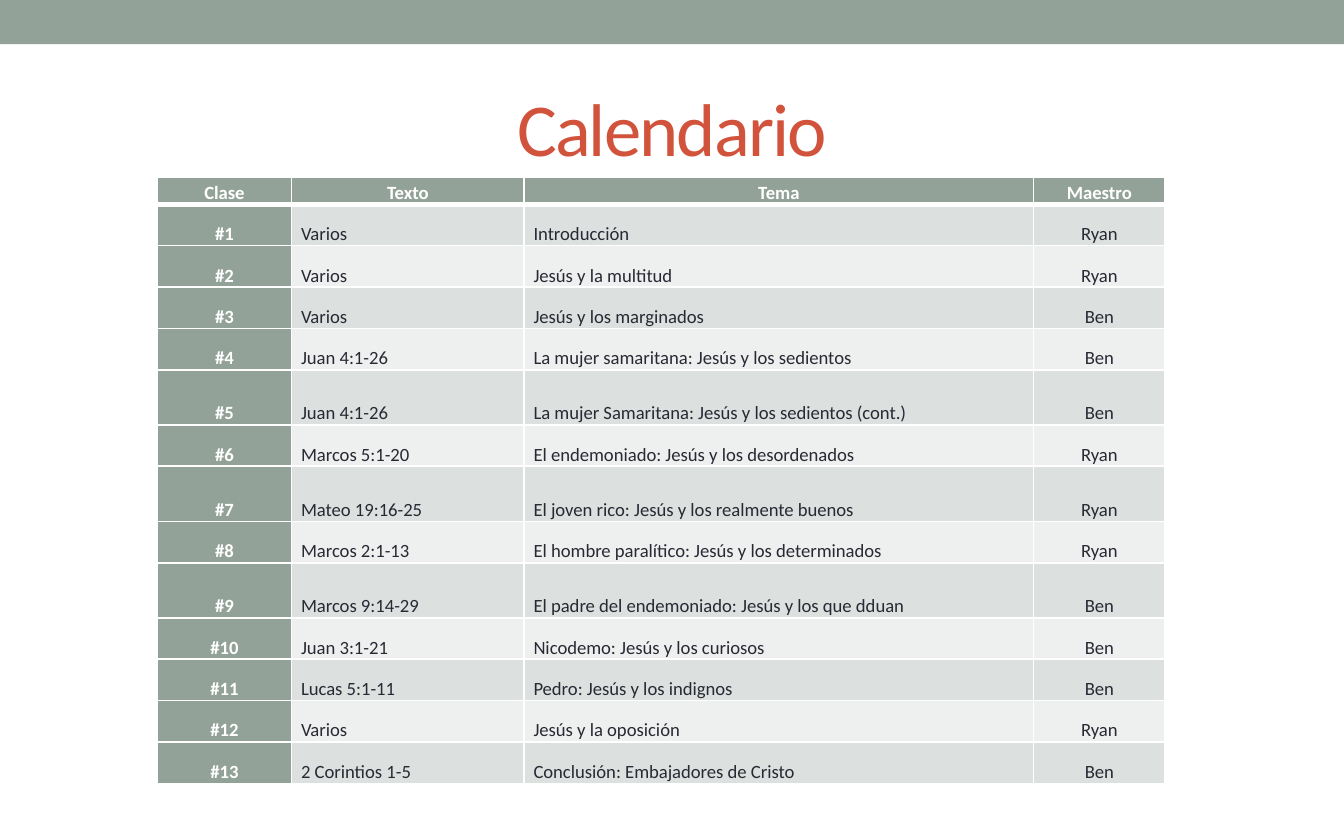
from dataclasses import dataclass

from lxml import etree
from pptx import Presentation
from pptx.dml.color import RGBColor
from pptx.enum.shapes import MSO_SHAPE
from pptx.enum.text import MSO_ANCHOR, PP_ALIGN
from pptx.oxml.ns import qn
from pptx.util import Inches, Pt

RECTANGLE = MSO_SHAPE.RECTANGLE
LEFT, CENTER = PP_ALIGN.LEFT, PP_ALIGN.CENTER
MIDDLE, BOTTOM = MSO_ANCHOR.MIDDLE, MSO_ANCHOR.BOTTOM


@dataclass(frozen=True)
class Theme:
    font: str = "Calibri"
    title_size: int = 40
    table_size: int = 10
    sage: str = "93A299"
    dark_row: str = "DCE0DE"
    light_row: str = "EEF0EF"
    rust: str = "D2533C"
    ink: str = "292934"
    white: str = "FFFFFF"


THEME = Theme()

HEADINGS = ("Clase", "Texto", "Tema", "Maestro")
LESSONS = [
    ("Varios", "Introducción", "Ryan"),
    ("Varios", "Jesús y la multitud", "Ryan"),
    ("Varios", "Jesús y los marginados", "Ben"),
    ("Juan 4:1-26", "La mujer samaritana: Jesús y los sedientos", "Ben"),
    ("Juan 4:1-26", "La mujer Samaritana: Jesús y los sedientos (cont.)", "Ben"),
    ("Marcos 5:1-20", "El endemoniado: Jesús y los desordenados", "Ryan"),
    ("Mateo 19:16-25", "El joven rico: Jesús y los realmente buenos", "Ryan"),
    ("Marcos 2:1-13", "El hombre paralítico: Jesús y los determinados", "Ryan"),
    ("Marcos 9:14-29", "El padre del endemoniado: Jesús y los que dduan", "Ben"),
    ("Juan 3:1-21", "Nicodemo: Jesús y los curiosos", "Ben"),
    ("Lucas 5:1-11", "Pedro: Jesús y los indignos", "Ben"),
    ("Varios", "Jesús y la oposición", "Ryan"),
    ("2 Corintios 1-5", "Conclusión: Embajadores de Cristo", "Ben"),
]

# Table measures in inches; the ordinary rows share the height left over
COLUMN_WIDTHS = (1.0, 1.73, 3.79, 0.98)
TABLE_HEIGHT, HEADER_HEIGHT, TALL_HEIGHT = 4.51, 0.2, 0.41
TALL_LESSONS = (5, 7, 9)
LESSON_HEIGHT = (
    TABLE_HEIGHT - HEADER_HEIGHT - TALL_HEIGHT * len(TALL_LESSONS)
) / (len(LESSONS) - len(TALL_LESSONS))


def apply_format(target, values):
    for name, value in values.items():
        setattr(target, name, value)


def format_font(font, size, color, bold=False):
    apply_format(font, {"name": THEME.font, "size": Pt(size), "bold": bold})
    font.color.rgb = RGBColor.from_string(color)


def add_top_band(slide, width):
    band = slide.shapes.add_shape(RECTANGLE, 0, 0, width, Inches(0.33))
    band.shadow.inherit = False
    band.fill.solid()
    band.fill.fore_color.rgb = RGBColor.from_string(THEME.sage)
    band.line.fill.background()


def set_title(slide, text):
    title = slide.shapes.title
    apply_format(title, {
        "left": Inches(0.5), "top": Inches(0.49),
        "width": Inches(9), "height": Inches(0.9),
    })
    title.text_frame.vertical_anchor = MIDDLE
    paragraph = title.text_frame.paragraphs[0]
    paragraph.alignment = CENTER
    run = paragraph.add_run()
    run.text = text
    format_font(run.font, THEME.title_size, THEME.rust)
    run.font._element.set("spc", "-100")


def set_borders(cell, widths):
    """Draw white cell edges; widths maps L, R, T and B to points."""
    properties = cell._tc.get_or_add_tcPr()
    for side, points in widths.items():
        edge = etree.SubElement(properties, qn(f"a:ln{side}"), w=str(Pt(points)))
        fill = etree.SubElement(edge, qn("a:solidFill"))
        etree.SubElement(fill, qn("a:srgbClr"), val=THEME.white)


def fill_cell(cell, text, row, column):
    is_heading = row == 0 or column == 0
    band_color = THEME.dark_row if row % 2 else THEME.light_row

    # Edges, with a heavier rule under the header
    set_borders(cell, {
        "L": 1, "R": 1, "T": 3 if row == 1 else 1, "B": 3 if row == 0 else 1,
    })
    cell.fill.solid()
    cell.fill.fore_color.rgb = RGBColor.from_string(
        THEME.sage if is_heading else band_color)
    apply_format(cell, {
        "margin_left": Inches(0.07), "margin_right": Inches(0.07),
        "margin_top": 0, "margin_bottom": 0, "vertical_anchor": BOTTOM,
    })

    # Text
    paragraph = cell.text_frame.paragraphs[0]
    apply_format(paragraph, {
        "alignment": LEFT if row and column in (1, 2) else CENTER,
        "line_spacing": 1.15,
    })
    run = paragraph.add_run()
    run.text = text
    format_font(run.font, THEME.table_size,
                THEME.white if is_heading else THEME.ink, is_heading)


def add_calendar(slide):
    rows = [HEADINGS] + [
        (f"#{number}", *lesson) for number, lesson in enumerate(LESSONS, 1)
    ]
    table = slide.shapes.add_table(
        len(rows), len(HEADINGS), Inches(1.17), Inches(1.32),
        Inches(sum(COLUMN_WIDTHS)), Inches(TABLE_HEIGHT)).table
    table.first_col = True

    for column, width in zip(table.columns, COLUMN_WIDTHS):
        column.width = Inches(width)
    for row, texts in enumerate(rows):
        height = TALL_HEIGHT if row in TALL_LESSONS else LESSON_HEIGHT
        table.rows[row].height = Inches(height if row else HEADER_HEIGHT)
        for column, text in enumerate(texts):
            fill_cell(table.cell(row, column), text, row, column)


def main():
    presentation = Presentation()
    presentation.slide_width = Inches(10)
    presentation.slide_height = Inches(6.25)
    title_only = presentation.slide_layouts[5]
    slide = presentation.slides.add_slide(title_only)

    add_top_band(slide, presentation.slide_width)
    set_title(slide, "Calendario")
    add_calendar(slide)
    presentation.save("out.pptx")


if __name__ == "__main__":
    main()
